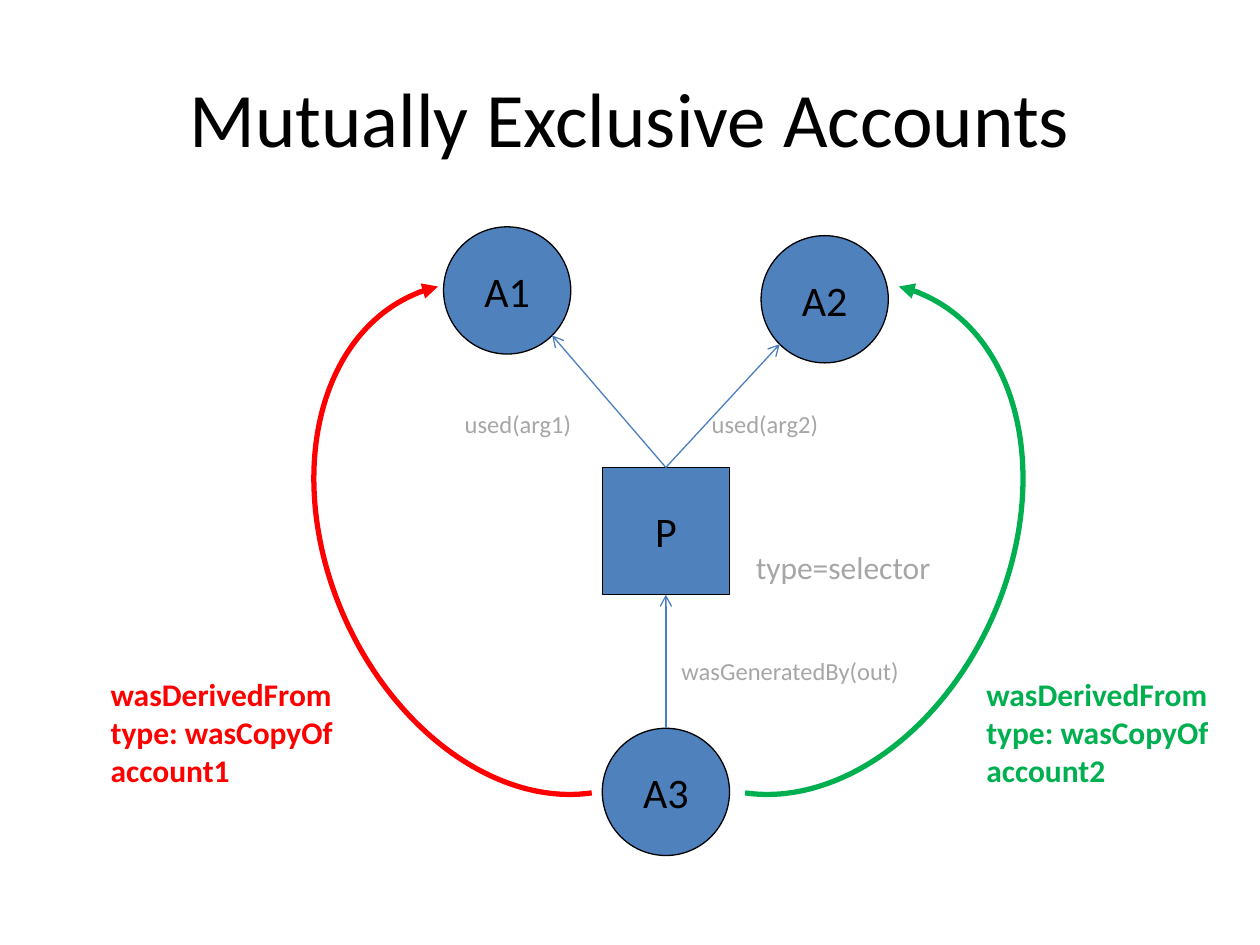
from math import sqrt
from lxml.etree import SubElement
from pptx import Presentation
from pptx.dml.color import RGBColor
from pptx.enum.shapes import MSO_CONNECTOR, MSO_SHAPE
from pptx.enum.text import MSO_ANCHOR, MSO_AUTO_SIZE, PP_ALIGN
from pptx.oxml.ns import qn
from pptx.util import Inches, Pt

FONT = "Calibri"
BLACK, BLUE, EDGE, GRAY = "000000", "4F81BD", "4B7EBC", "A6A6A6"
RED, GREEN = "FF0000", "00B050"
SIDE = 1.01


def color(code):
    return RGBColor.from_string(code)


def write(frame, text, size, code, bold=False, align=PP_ALIGN.LEFT):
    frame.text = text
    for para in frame.paragraphs:
        para.alignment = align
        for run in para.runs:
            font = run.font
            font.name, font.size, font.bold = FONT, Pt(size), bold
            font.color.rgb = color(code)


def draw_line(shape, code, width, end, kind):
    """Style the line and put an arrowhead at its headEnd or tailEnd."""
    shape.line.color.rgb = color(code)
    shape.line.width = Pt(width)
    SubElement(shape.line._get_or_add_ln(), qn("a:" + end), type=kind)


def add_title(slide, box, text):
    frame = slide.shapes.add_textbox(*map(Inches, box)).text_frame
    frame.word_wrap = True
    frame.vertical_anchor = MSO_ANCHOR.MIDDLE
    write(frame, text, 44, BLACK, align=PP_ALIGN.CENTER)


def add_label(slide, box, text, size, code=GRAY, bold=False):
    frame = slide.shapes.add_textbox(*map(Inches, box)).text_frame
    frame.word_wrap = False
    frame.auto_size = MSO_AUTO_SIZE.SHAPE_TO_FIT_TEXT
    write(frame, text, size, code, bold)


def add_node(slide, kind, left, top, text):
    node = slide.shapes.add_shape(kind, *map(Inches, (left, top, SIDE, SIDE)))
    node.shadow.inherit = False
    node.fill.solid()
    node.fill.fore_color.rgb = color(BLUE)
    node.line.color.rgb = color(BLACK)
    node.line.width = Pt(0.75)
    node.text_frame.word_wrap = False
    node.text_frame.vertical_anchor = MSO_ANCHOR.MIDDLE
    write(node.text_frame, text, 24, BLACK, align=PP_ALIGN.CENTER)
    return node


def add_edge(slide, start, site, end):
    """Draw an arrow from a side of start to the point end."""
    edge = slide.shapes.add_connector(MSO_CONNECTOR.STRAIGHT, 0, 0, *end)
    edge.begin_connect(start, site)
    SubElement(edge.element.spPr, qn("a:effectLst"))
    draw_line(edge, EDGE, 0.75, "tailEnd", "arrow")
    return edge


def rim_point(node, sign):
    """Point on the lower rim of a circle, 45 degrees to one side."""
    reach = node.width / 2 / sqrt(2)
    return (int(node.left + node.width / 2 + sign * reach),
            int(node.top + node.height / 2 + reach))


def add_arc(slide, box, code, flip=False):
    arc = slide.shapes.add_shape(MSO_SHAPE.ARC, *map(Inches, box))
    arc.shadow.inherit = False
    arc.fill.background()
    arc.adjustments[0], arc.adjustments[1] = 158.6, 48.98
    arc.rotation = 336.1 if flip else 23.9
    if flip:
        arc.element.spPr.find(qn("a:xfrm")).set("flipH", "1")
    draw_line(arc, code, 3, "headEnd", "triangle")


def add_graph(slide, left, top):
    """Draw the nodes, with P's column 1.26 in from the left."""
    mid = left + 1.26
    process = add_node(slide, MSO_SHAPE.RECTANGLE, mid, top + 1.91, "P")
    first, second, third = [
        add_node(slide, MSO_SHAPE.OVAL, x, y, text)
        for x, y, text in ((left, top, "A1"), (mid + 1.26, top + 0.07, "A2"),
                           (mid, top + 3.98, "A3"))]
    add_edge(slide, process, 0, rim_point(first, 1))
    add_edge(slide, process, 0, rim_point(second, -1))
    add_edge(slide, third, 0, (0, 0)).end_connect(process, 2)
    for x, y, width, height, text, size in (
            (2.03, 1.4, 1.06, 0.34, "used(arg2)", 14),
            (0.07, 1.4, 1.06, 0.34, "used(arg1)", 14),
            (1.79, 3.36, 1.95, 0.34, "wasGeneratedBy(out)", 14),
            (2.38, 2.5, 1.6, 0.4, "type=selector", 18)):
        add_label(slide, (left + x, top + y, width, height), text, size)


def add_account(slide, number, code, arc_left, label_left, flip):
    add_arc(slide, (arc_left, 2.16, 3.07, 4.23), code, flip)
    text = f"wasDerivedFrom\ntype: wasCopyOf\naccount{number}"
    add_label(slide, (label_left, 5.31, 1.97, 1.01), text, 18, code, True)


def main():
    deck = Presentation()
    deck.slide_width, deck.slide_height = Inches(10), Inches(7.5)
    slide = deck.slides.add_slide(deck.slide_layouts[6])
    add_title(slide, (0.5, 0.3, 9, 1.25), "Mutually Exclusive Accounts")
    add_graph(slide, 3.52, 1.8)
    add_account(slide, 2, GREEN, 4.94, 7.73, False)
    add_account(slide, 1, RED, 2.6, 0.78, True)
    deck.save("out.pptx")


if __name__ == "__main__":
    main()
